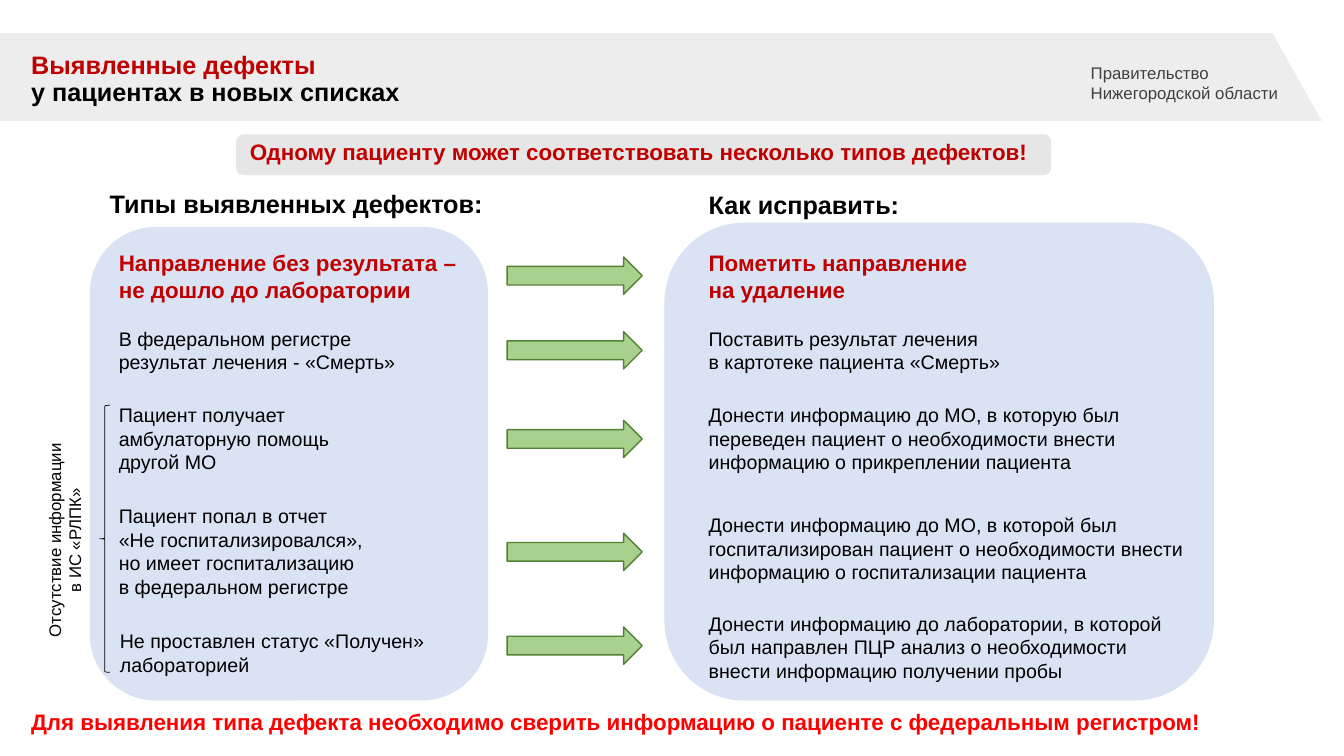
from dataclasses import dataclass

from lxml import etree
from pptx import Presentation
from pptx.dml.color import RGBColor
from pptx.enum.shapes import MSO_SHAPE
from pptx.enum.text import MSO_ANCHOR, MSO_AUTO_SIZE, PP_ALIGN
from pptx.oxml.ns import qn
from pptx.shapes.autoshape import Shape
from pptx.slide import Slide
from pptx.util import Inches, Pt

ROUNDED = MSO_SHAPE.ROUNDED_RECTANGLE
ARROW = MSO_SHAPE.RIGHT_ARROW
BRACE = MSO_SHAPE.LEFT_BRACE
TOP = MSO_ANCHOR.TOP
FIXED_SIZE = MSO_AUTO_SIZE.NONE
LEFT = PP_ALIGN.LEFT
CENTER = PP_ALIGN.CENTER


@dataclass(frozen=True)
class Theme:
    font: str = "Arial"
    black: str = "000000"
    dark_red: str = "C00000"
    bright_red: str = "FF0000"
    owner: str = "404040"
    band: str = "D9D9D9"
    band_opacity: int = 45
    panel: str = "DAE3F3"
    notice: str = "E7E6E6"
    arrow: str = "A9D18E"
    arrow_line: str = "548235"
    heading: int = 18
    accent: int = 16
    body: int = 14
    small: int = 12


THEME = Theme()


@dataclass(frozen=True)
class Box:
    left: float
    top: float
    width: float
    height: float


@dataclass(frozen=True)
class Line:
    text: str
    color: str = THEME.black


@dataclass(frozen=True)
class Label:
    box: Box
    lines: tuple[Line, ...]
    size: int = THEME.body
    bold: bool = False
    spacing: float = 1.0
    align: PP_ALIGN = LEFT
    rotation: int = 0


@dataclass(frozen=True)
class Figure:
    kind: MSO_SHAPE
    box: Box
    fill: str | None
    line: str | None = None
    line_width: float = 1


@dataclass(frozen=True)
class Row:
    arrow_top: float
    defect: Box
    defect_text: str
    remedy: Box
    remedy_text: str
    highlighted: bool = False


def lines(text: str, color: str = THEME.black) -> tuple[Line, ...]:
    return tuple(Line(part, color) for part in text.split("\n"))


def heading(box: Box, text: str) -> Label:
    return Label(box, lines(text), THEME.heading, True, 0.9)


def banner(box: Box, text: str, color: str) -> Label:
    return Label(box, lines(text, color), THEME.accent, True, 0.9)


def row_label(box: Box, text: str, highlighted: bool) -> Label:
    if highlighted:
        return Label(box, lines(text, THEME.dark_red), THEME.accent, True)
    return Label(box, lines(text))


DEFECT_LEFT, REMEDY_LEFT = 1.08, 6.93
ROWS = (
    Row(2.55, Box(DEFECT_LEFT, 2.42, 3.55, 0.64),
        "Направление без результата –\nне дошло до лаборатории",
        Box(REMEDY_LEFT, 2.42, 3.55, 0.64),
        "Пометить направление\nна удаление", True),
    Row(3.29, Box(DEFECT_LEFT, 3.19, 3.55, 0.57),
        "В федеральном регистре\nрезультат лечения - «Смерть»",
        Box(REMEDY_LEFT, 3.19, 3.74, 0.57),
        "Поставить результат лечения\nв картотеке пациента «Смерть»"),
    Row(4.17, Box(DEFECT_LEFT, 3.95, 2.87, 0.81),
        "Пациент получает\nамбулаторную помощь\nдругой МО",
        Box(REMEDY_LEFT, 3.95, 5.15, 0.81),
        "Донести информацию до МО, в которую был\n"
        "переведен пациент о необходимости внести\n"
        "информацию о прикреплении пациента"),
    Row(5.29, Box(DEFECT_LEFT, 4.95, 3.02, 1.04),
        "Пациент попал в отчет\n«Не госпитализировался»,\n"
        "но имеет госпитализацию\nв федеральном регистре",
        Box(REMEDY_LEFT, 5.04, 5.55, 0.81),
        "Донести информацию до МО, в которой был\n"
        "госпитализирован пациент о необходимости внести\n"
        "информацию о госпитализации пациента"),
    Row(6.22, Box(DEFECT_LEFT + 0.01, 6.19, 3.55, 0.57),
        "Не проставлен статус «Получен»\nлабораторией",
        Box(REMEDY_LEFT, 6.02, 5.45, 0.81),
        "Донести информацию до лаборатории, в которой\n"
        "был направлен ПЦР анализ о необходимости\n"
        "внести информацию получении пробы"),
)
TITLE = Label(Box(0.21, 0.47, 6.95, 0.65),
              (Line("Выявленные дефекты", THEME.dark_red), Line("у пациентах в новых списках")),
              THEME.heading, True, 0.9)
LABELS = (
    Label(Box(10.72, 0.57, 2.13, 0.49),
          lines("Правительство\nНижегородской области", THEME.owner), THEME.small),
    banner(Box(2.38, 1.35, 8.04, 0.34),
           "Одному пациенту может соответствовать несколько типов дефектов!", THEME.dark_red),
    heading(Box(0.99, 1.85, 4.1, 0.37), "Типы выявленных дефектов:"),
    heading(Box(REMEDY_LEFT, 1.86, 4.03, 0.37), "Как исправить:"),
    Label(Box(-0.58, 5.11, 2.44, 0.5), lines("Отсутствие информации\nв ИС «РЛПК»"),
          THEME.small, align=CENTER, rotation=270),
    banner(Box(0.21, 7.01, 13.21, 0.34),
           "Для выявления типа дефекта необходимо сверить информацию "
           "о пациенте с федеральным регистром!", THEME.bright_red),
)
FIGURES = (
    Figure(ROUNDED, Box(6.59, 2.21, 5.45, 4.74), THEME.panel),
    Figure(ROUNDED, Box(0.89, 2.25, 3.95, 4.7), THEME.panel),
    Figure(ROUNDED, Box(2.35, 1.34, 8.07, 0.39), THEME.notice, THEME.notice),
    Figure(BRACE, Box(0.99, 4.02, 0.1, 2.65), None, THEME.black, 0.5),
)


def place(box: Box) -> tuple[int, int, int, int]:
    return Inches(box.left), Inches(box.top), Inches(box.width), Inches(box.height)


def write_label(shape: Shape, label: Label) -> None:
    shape.rotation = label.rotation
    frame = shape.text_frame
    frame.word_wrap = True
    frame.auto_size = FIXED_SIZE
    frame.vertical_anchor = TOP
    paragraph = frame.paragraphs[0]
    paragraph.alignment = label.align
    paragraph.line_spacing = label.spacing
    for index, line in enumerate(label.lines):
        if index:
            paragraph.add_line_break()
        run = paragraph.add_run()
        run.text = line.text
        run.font.name = THEME.font
        run.font.size = Pt(label.size)
        run.font.bold = label.bold
        run.font.color.rgb = RGBColor.from_string(line.color)


def add_label(slide: Slide, label: Label) -> None:
    write_label(slide.shapes.add_textbox(*place(label.box)), label)


def paint(shape: Shape, fill: str | None, line: str | None = None, width: float = 1) -> None:
    shape.shadow.inherit = False
    if fill:
        shape.fill.solid()
        shape.fill.fore_color.rgb = RGBColor.from_string(fill)
    else:
        shape.fill.background()
    if line:
        shape.line.color.rgb = RGBColor.from_string(line)
        shape.line.width = Pt(width)
    else:
        shape.line.fill.background()


def add_figure(slide: Slide, figure: Figure) -> None:
    shape = slide.shapes.add_shape(figure.kind, *place(figure.box))
    paint(shape, figure.fill, figure.line, figure.line_width)


def add_header(slide: Slide) -> None:
    builder = slide.shapes.build_freeform(Inches(13.11), Inches(1.2), scale=1.0)
    corners = ((12.62, 0.33), (-0.01, 0.33), (0, 1.2))
    builder.add_line_segments([(Inches(x), Inches(y)) for x, y in corners], close=True)
    band = builder.convert_to_shape()
    paint(band, THEME.band)
    color = band.element.spPr.find(qn("a:solidFill")).find(qn("a:srgbClr"))
    etree.SubElement(color, qn("a:alpha")).set("val", str(THEME.band_opacity * 1000))
    title = slide.shapes.title
    title.element.addprevious(band.element)
    title.left, title.top, title.width, title.height = place(TITLE.box)
    write_label(title, TITLE)


def main() -> None:
    presentation = Presentation()
    presentation.slide_width, presentation.slide_height = Inches(13.33), Inches(7.5)
    slide = presentation.slides.add_slide(presentation.slide_layouts[5])
    add_header(slide)
    for figure in FIGURES:
        add_figure(slide, figure)
    for label in LABELS:
        add_label(slide, label)
    for row in ROWS:
        add_label(slide, row_label(row.defect, row.defect_text, row.highlighted))
        arrow_box = Box(5.03, row.arrow_top, 1.34, 0.37)
        add_figure(slide, Figure(ARROW, arrow_box, THEME.arrow, THEME.arrow_line))
        add_label(slide, row_label(row.remedy, row.remedy_text, row.highlighted))
    presentation.save("out.pptx")


if __name__ == "__main__":
    main()
